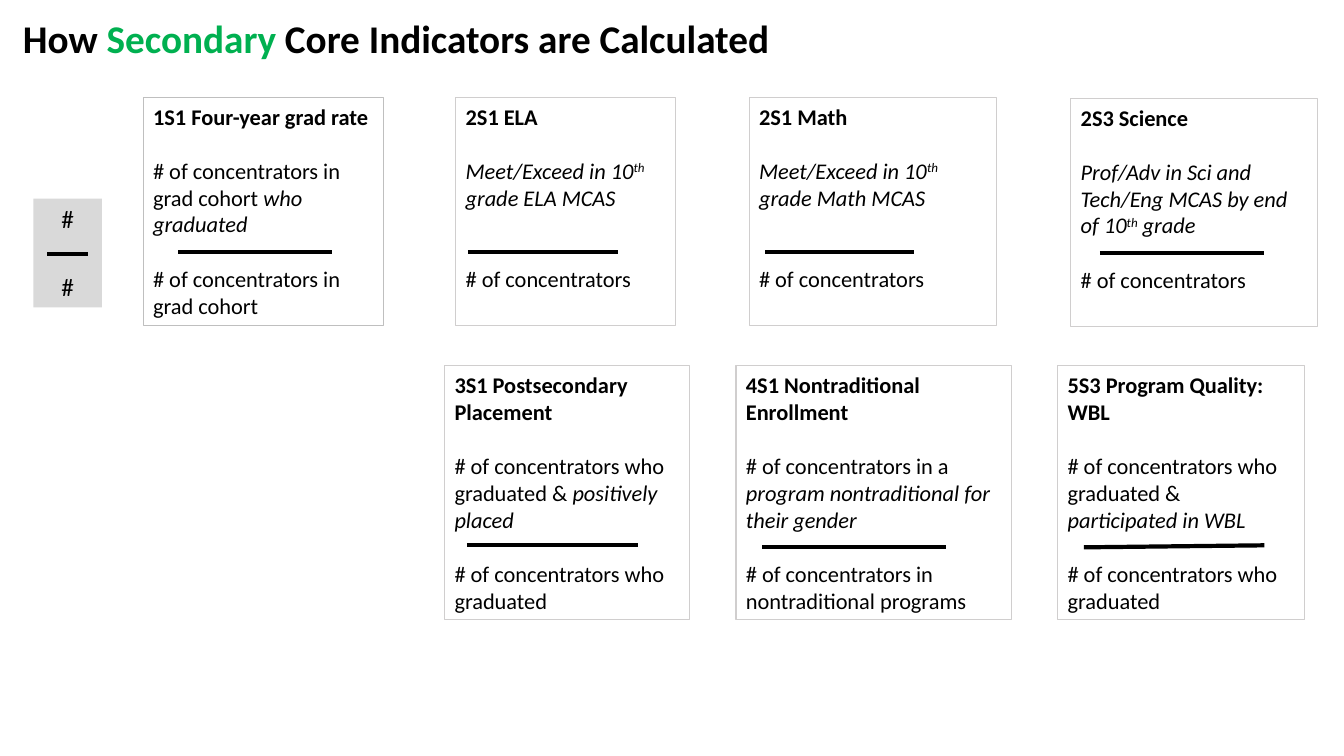
from lxml import etree
from pptx import Presentation
from pptx import util as u
from pptx.dml.color import RGBColor
from pptx.enum import shapes, text
from pptx.oxml.ns import qn

FONT = "Calibri"
BLACK, GREEN, GRAY = "000000", "00B050", "D9D9D9"
BORDER, DARK_BORDER = "D0CECE", "BFBFBF"
LINE_GAP = 19.5  # height in points of one line of 16 pt text
TOP_ROW = (0.97, 2.26)  # top, height
BOTTOM_ROW = (3.63, 2.52)


def color(hex_code):
    return RGBColor.from_string(hex_code)


def italic(words):
    return words, {"italic": True}


def superscript(words):
    return words, {"italic": True, "baseline": 30000}


def add_run(paragraph, words, size=16, bold=False, italic=False,
            hex_code=BLACK, baseline=None):
    run = paragraph.add_run()
    run.text = words
    font = run.font
    font.name, font.size = FONT, u.Pt(size)
    font.bold, font.italic = bold, italic
    font.color.rgb = color(hex_code)
    if baseline:
        font._element.set("baseline", str(baseline))


def write(shape, paragraphs, gaps=(), align=text.PP_ALIGN.LEFT,
          anchor=text.MSO_ANCHOR.TOP, **formatting):
    """Each paragraph is a list of strings or (string, format) pairs."""
    frame = shape.text_frame
    frame.word_wrap = True
    frame.vertical_anchor = anchor
    for index, runs in enumerate(paragraphs):
        paragraph = frame.add_paragraph() if index else frame.paragraphs[0]
        paragraph.alignment = align
        if index:
            paragraph.space_before = u.Pt(gaps[index - 1])
        for run in runs:
            words, extra = (run, {}) if isinstance(run, str) else run
            add_run(paragraph, words, **{**formatting, **extra})


def add_box(slide, left, top, width, height, fill=None, border=None):
    box = slide.shapes.add_shape(
        shapes.MSO_SHAPE.RECTANGLE, u.Inches(left), u.Inches(top),
        u.Inches(width), u.Inches(height))
    box.shadow.inherit = False
    if fill:
        box.fill.solid()
        box.fill.fore_color.rgb = color(fill)
    else:
        box.fill.background()
    if border:
        box.line.color.rgb = color(border)
        box.line.width = u.Pt(0.75)
    else:
        box.line.fill.background()
    return box


def add_fraction_bar(slide, start_x, end_x, start_y, end_y=None):
    end_y = start_y if end_y is None else end_y
    bar = slide.shapes.add_connector(
        shapes.MSO_CONNECTOR.STRAIGHT, u.Inches(start_x), u.Inches(start_y),
        u.Inches(end_x), u.Inches(end_y))
    bar.line.color.rgb = color(BLACK)
    bar.line.width = u.Pt(3)
    etree.SubElement(bar._element.spPr, qn("a:effectLst"))


def add_indicator(slide, row, left, width, heading, numerator, denominator,
                  bar, blank_lines=1, border=BORDER):
    top, height = row
    box = add_box(slide, left, top, width, height, border=border)
    write(box, [[(heading, {"bold": True})], numerator, [denominator]],
          gaps=(LINE_GAP, LINE_GAP * blank_lines))
    add_fraction_bar(slide, *bar)


def add_title(slide):
    title = slide.shapes.add_textbox(
        u.Inches(0.13), u.Inches(0.09), u.Inches(10.1), u.Inches(0.57))
    write(title, [["How ", ("Secondary", {"hex_code": GREEN}),
                   " Core Indicators are Calculated"]],
          anchor=text.MSO_ANCHOR.MIDDLE, size=28, bold=True)


def add_key(slide):
    key = add_box(slide, 0.33, 1.97, 0.68, 1.08, fill=GRAY)
    write(key, [["#"], ["#"]], gaps=(26.8,), size=18,
          align=text.PP_ALIGN.CENTER)
    add_fraction_bar(slide, 0.47, 0.87, 2.52)


def main():
    presentation = Presentation()
    presentation.slide_width = u.Inches(13.33)
    presentation.slide_height = u.Inches(7.5)
    slide = presentation.slides.add_slide(presentation.slide_layouts[6])

    add_title(slide)
    add_key(slide)

    # Top row: graduation and achievement
    add_indicator(slide, TOP_ROW, 1.42, 2.38, "1S1 Four-year grad rate",
                  ["# of concentrators in grad cohort ",
                   italic("who graduated")],
                  "# of concentrators in grad cohort",
                  (1.77, 3.29, 2.5), border=DARK_BORDER)
    for subject, left, width, bar in (
            ("ELA", 4.52, 2.18, (4.64, 6.13, 2.5)),
            ("Math", 7.43, 2.45, (7.59, 9.07, 2.5))):
        add_indicator(slide, TOP_ROW, left, width, f"2S1 {subject}",
                      [italic("Meet/Exceed in 10"), superscript("th"),
                       italic(f" grade {subject} MCAS")],
                      "# of concentrators", bar, blank_lines=2)
    add_indicator(slide, (0.98, 2.26), 10.62, 2.45, "2S3 Science",
                  [italic("Prof/Adv in Sci and Tech/Eng MCAS by end of 10"),
                   superscript("th"), italic(" grade")],
                  "# of concentrators", (10.91, 12.54, 2.51))

    # Bottom row: placement, enrollment and program quality
    for left, width, heading, outcome, bar in (
            (4.41, 2.43, "3S1 Postsecondary Placement", "positively placed",
             (4.63, 6.33, 5.41)),
            (10.49, 2.45, "5S3 Program Quality: WBL", "participated in WBL",
             (10.75, 12.54, 5.43, 5.41))):
        add_indicator(slide, BOTTOM_ROW, left, width, heading,
                      ["# of concentrators who graduated & ",
                       italic(outcome)],
                      "# of concentrators who graduated", bar)
    add_indicator(slide, BOTTOM_ROW, 7.3, 2.73,
                  "4S1 Nontraditional Enrollment",
                  ["# of concentrators in a ",
                   italic("program nontraditional for their gender")],
                  "# of concentrators in nontraditional programs",
                  (7.56, 9.38, 5.43))

    presentation.save("out.pptx")


if __name__ == "__main__":
    main()
